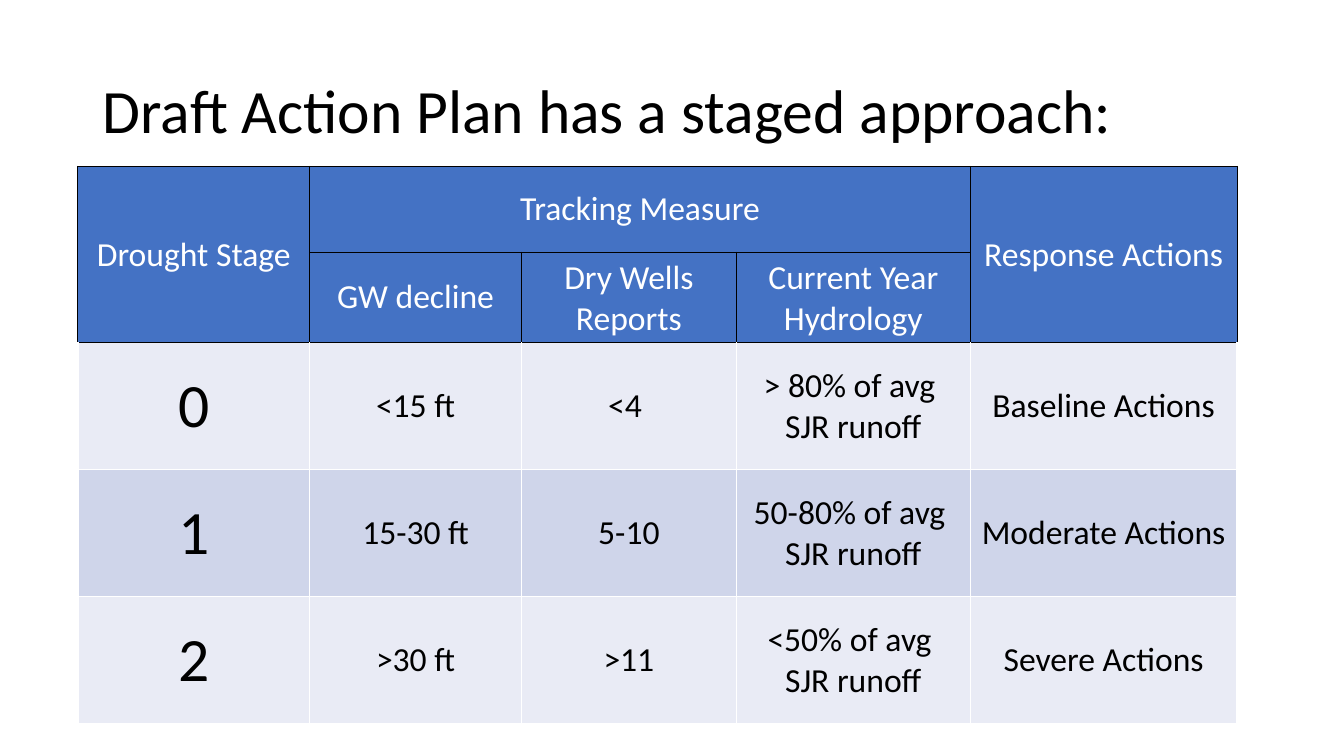
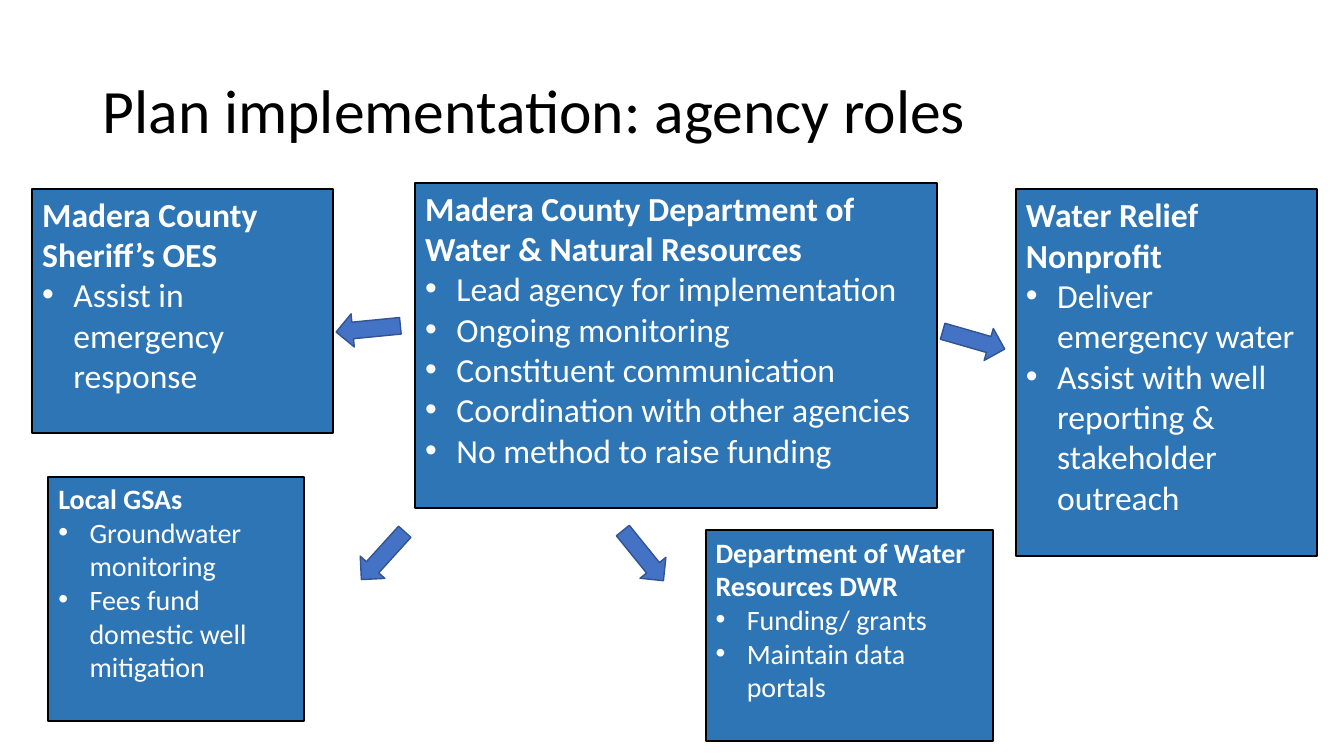
import pptx
import pptx.util
import pptx.dml.color
import pptx.enum.shapes
import pptx.enum.text
import pptx.oxml
import pptx.oxml.ns

WIDE, HIGH = pptx.util.Inches(13.333), pptx.util.Inches(7.5)
FONT = "Calibri"
BLACK, WHITE = "000000", "FFFFFF"
BLUE, EDGE, PANEL = "4472C4", "325491", "2E75B6"
BANDS = ("E9EBF5", "CFD5EA")
ALIGN = pptx.enum.text.PP_ALIGN
ANCHOR = pptx.enum.text.MSO_ANCHOR
SHAPE = pptx.enum.shapes.MSO_SHAPE

# Stage table: column widths and row heights in percent of the slide
COLS = (17.25, 15.75, 16, 17.4, 19.85)
ROWS = (11.35, 11.1, 16.8, 16.8, 16.8)
HEADS = 2
STAGES = (
    ("Drought Stage", "Tracking Measure", "", "", "Response Actions"),
    ("", "GW decline", "Dry Wells Reports", "Current Year Hydrology", ""),
    ("0", "<15 ft", "<4 ", "> 80% of avg \nSJR runoff", "Baseline Actions"),
    ("1", "15-30 ft", "5-10", "50-80% of avg \nSJR runoff", "Moderate Actions"),
    ("2", ">30 ft", ">11", "<50% of avg \nSJR runoff", "Severe Actions"),
)
MERGES = ((0, 0, 1, 0), (0, 1, 0, 3), (0, 4, 1, 4))

# Place in percent of the slide, text size, name, roles
AGENCIES = (
    ((30.9, 24.15, 38.8, 43.05), 24,
     "Madera County Department of Water & Natural Resources",
     ("Lead agency for implementation", "Ongoing monitoring",
      "Constituent communication", "Coordination with other agencies",
      "No method to raise funding")),
    ((3.6, 63.05, 19, 32.3), 20, "Local GSAs",
     ("Groundwater monitoring", "Fees fund domestic well mitigation")),
    ((52.5, 70.15, 21.4, 27.85), 20, "Department of Water Resources DWR",
     ("Funding/ grants", "Maintain data portals")),
    ((2.4, 24.95, 22.4, 32.3), 24, "Madera County Sheriff’s OES",
     ("Assist in emergency response",)),
    ((75.6, 25.05, 22.4, 48.55), 24, "Water Relief Nonprofit",
     ("Deliver emergency water",
      "Assist with well reporting & stakeholder outreach")),
)
# Left, top, turn in degrees
ARROWS = ((25, 41.3, 174.4), (26.1, 71.3, 132.2),
          (45.45, 71.3, 51), (70.05, 42.8, 16))


def across(share):
    return round(WIDE * share / 100)


def down(share):
    return round(HIGH * share / 100)


def place(left, top, width, height):
    return across(left), down(top), across(width), down(height)


def color(code):
    return pptx.dml.color.RGBColor.from_string(code)


def paint(item, code):
    item.fill.solid()
    item.fill.fore_color.rgb = color(code)


def write(para, text, size, code, bold=False, align=ALIGN.LEFT):
    para.text = text
    para.alignment = align
    for run in para.runs:
        font = run.font
        font.name, font.size, font.bold = FONT, pptx.util.Pt(size), bold
        font.color.rgb = color(code)


def bullet(para):
    props = para._p.get_or_add_pPr()
    indent = pptx.util.Inches(0.31)
    props.set("marL", str(indent))
    props.set("indent", str(-indent))
    for tag, key, value in (("buFont", "typeface", "Arial"),
                            ("buChar", "char", "•")):
        mark = pptx.oxml.parse_xml(
            f'<a:{tag} {pptx.oxml.ns.nsdecls("a")} {key}="{value}"/>')
        props.append(mark)


def border(cell, sides):
    """Draw (colour, points) lines, given in the order left, right, top, bottom."""
    props = cell._tc.get_or_add_tcPr()
    for spot, (side, (code, points)) in enumerate(zip("LRTB", sides)):
        line = pptx.oxml.parse_xml(
            f'<a:ln{side} {pptx.oxml.ns.nsdecls("a")} w="{pptx.util.Pt(points)}">'
            f'<a:solidFill><a:srgbClr val="{code}"/></a:solidFill></a:ln{side}>')
        props.insert(spot, line)


def page(deck, title):
    """Add a blank slide with the shared title style."""
    slide = deck.slides.add_slide(deck.slide_layouts[6])
    frame = slide.shapes.add_textbox(*place(6.9, 5.35, 86.25, 19.3)).text_frame
    frame.word_wrap = True
    frame.vertical_anchor = ANCHOR.MIDDLE
    write(frame.paragraphs[0], title, 44, BLACK)
    frame.paragraphs[0].line_spacing = 0.9
    return slide


def shape(slide, kind, spot, fill, line, points):
    item = slide.shapes.add_shape(kind, *place(*spot))
    item.shadow.inherit = False
    paint(item, fill)
    item.line.color.rgb = color(line)
    item.line.width = pptx.util.Pt(points)
    return item


def panel(slide, spot, size, name, roles):
    frame = shape(slide, SHAPE.RECTANGLE, spot, PANEL, BLACK, 1.5).text_frame
    frame.word_wrap = True
    frame.vertical_anchor = ANCHOR.TOP
    write(frame.paragraphs[0], name, size, WHITE, bold=True)
    for role in roles:
        para = frame.add_paragraph()
        write(para, role, size, WHITE)
        bullet(para)


def arrow(slide, left, top, turn):
    item = shape(slide, SHAPE.RIGHT_ARROW, (left, top, 4.8, 4.4), BLUE, EDGE, 1)
    item.rotation = turn


def style(cell, row, col, text):
    head = row < HEADS
    dark, light = (BLACK, 0.75), (WHITE, 1)
    side = dark if head else light
    top = dark if row <= HEADS else light
    border(cell, (side, side, top, side))
    paint(cell, BLUE if head else BANDS[(row - HEADS) % 2])
    cell.vertical_anchor = ANCHOR.MIDDLE
    size = 44 if col == 0 and not head else 24
    write(cell.text_frame.paragraphs[0], text, size,
          WHITE if head else BLACK, align=ALIGN.CENTER)


def stages(slide):
    spot = place(5.8, 22, sum(COLS), sum(ROWS))
    table = slide.shapes.add_table(len(ROWS), len(COLS), *spot).table
    table.first_row = table.horz_banding = False
    for col, width in zip(table.columns, COLS):
        col.width = across(width)
    for row, height in zip(table.rows, ROWS):
        row.height = down(height)
    for row, texts in enumerate(STAGES):
        for col, text in enumerate(texts):
            style(table.cell(row, col), row, col, text)
    for top, left, low, right in MERGES:
        table.cell(top, left).merge(table.cell(low, right))


def main():
    deck = pptx.Presentation()
    deck.slide_width, deck.slide_height = WIDE, HIGH
    stages(page(deck, "Draft Action Plan has a staged approach:"))
    roles = page(deck, "Plan implementation: agency roles")
    for agency in AGENCIES:
        panel(roles, *agency)
    for spot in ARROWS:
        arrow(roles, *spot)
    deck.save("out.pptx")


if __name__ == "__main__":
    main()
